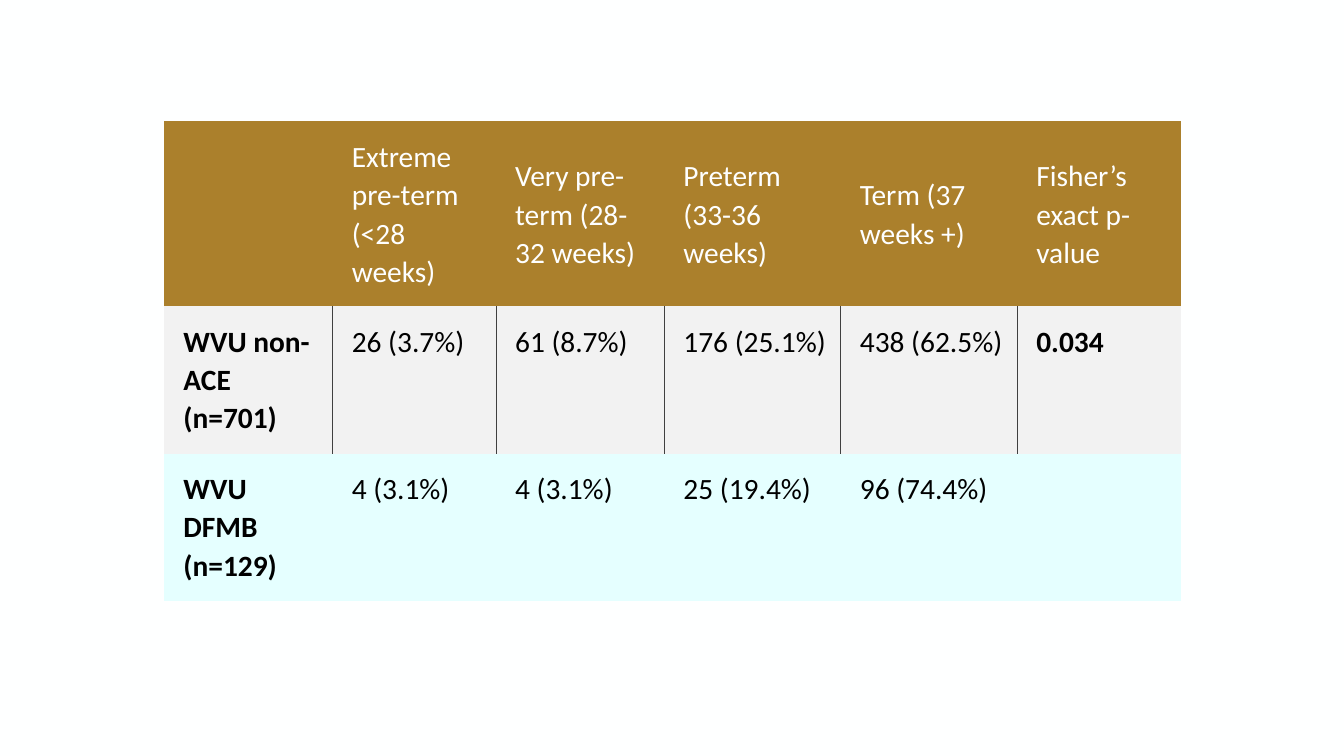
from lxml.etree import SubElement as Sub
from pptx import Presentation as Deck
from pptx.dml.color import RGBColor as Rgb
from pptx.enum.text import MSO_ANCHOR as Anchor
from pptx.oxml.ns import qn
from pptx.util import Inches, Pt

INK = {"paper": "FEFFFF", "gold": "AB802C", "grey": "F2F2F2",
       "aqua": "E5FFFF", "rule": "404040", "text": "000000"}
PLAIN = "{2D5ABB26-0587-4C30-8999-92F81FD0307C}"
COLS = [1.67, 1.62, 1.67, 1.75, 1.75, 1.62]
TALL = [1.84, 1.46, 1.46]
DATA = [
    ["", "Extreme pre-term (<28 weeks)", "Very pre-term (28-32 weeks)",
     "Preterm (33-36 weeks)", "Term (37 weeks +)", "Fisher’s exact p-value"],
    ["WVU non-ACE (n=701)", "26 (3.7%)", "61 (8.7%)", "176 (25.1%)",
     "438 (62.5%)", "0.034"],
    ["WVU DFMB (n=129)", "4 (3.1%)", "4 (3.1%)", "25 (19.4%)",
     "96 (74.4%)", ""],
]


def write(frame, text, size=21, color="text", bold=False, face="Calibri"):
    para = frame.paragraphs[0]
    para.line_spacing = 1.07
    if not text:
        return
    run = para.add_run()
    run.text = text
    font = run.font
    font.name, font.size, font.bold = face, Pt(size), bold
    font.color.rgb = Rgb.from_string(INK[color])


class Page:
    """Holds the style and the slide, and draws the parts of the slide."""

    def __init__(self, deck):
        self.slide = deck.slides.add_slide(deck.slide_layouts[6])
        self.paint(self.slide.background.fill, "paper")

    def paint(self, fill, color, alpha=None):
        fill.solid()
        fill.fore_color.rgb = Rgb.from_string(INK[color])
        if alpha:
            tone = fill._xPr.find(".//" + qn("a:srgbClr"))
            Sub(tone, qn("a:alpha"), val=str(alpha * 1000))

    def edge(self, cell, side):
        line = Sub(cell._tc.get_or_add_tcPr(), qn("a:ln" + side),
                   w=str(Pt(0.5)))
        tone = Sub(line, qn("a:solidFill"))
        Sub(tone, qn("a:srgbClr"), val=INK["rule"])

    def cell(self, cell, text, fill, alpha=None, sides="", mid=False, **form):
        cell.margin_left, cell.margin_right = Inches(0.19), Inches(0.11)
        cell.margin_top = cell.margin_bottom = Inches(0.15)
        cell.vertical_anchor = Anchor.MIDDLE if mid else Anchor.TOP
        for side in sides:
            self.edge(cell, side)
        self.paint(cell.fill, fill, alpha)
        write(cell.text_frame, text, **form)

    def table(self, left, top, data, cols, tall):
        box = self.slide.shapes.add_table(
            len(tall), len(cols), Inches(left), Inches(top),
            Inches(sum(cols)), Inches(sum(tall)))
        grid = box.table
        grid.horz_banding = False
        grid._tbl.tblPr.find(qn("a:tableStyleId")).text = PLAIN
        for col, wide in zip(grid.columns, cols):
            col.width = Inches(wide)
        for row, high in zip(grid.rows, tall):
            row.height = Inches(high)
        looks = [dict(fill="gold", color="paper", mid=True),
                 dict(fill="grey", alpha=30), dict(fill="aqua")]
        last = len(cols) - 1
        for r, (line, look) in enumerate(zip(data, looks)):
            for c, text in enumerate(line):
                sides = ("L" if c else "") + ("R" if c < last else "")
                self.cell(grid.cell(r, c), text, bold=r > 0 and c in (0, last),
                          sides=sides if r == 1 else "", **look)


def main():
    deck = Deck()
    deck.slide_width, deck.slide_height = Inches(13.33), Inches(7.5)
    Page(deck).table(1.63, 1.2, DATA, COLS, TALL)
    deck.save("out.pptx")


if __name__ == "__main__":
    main()
